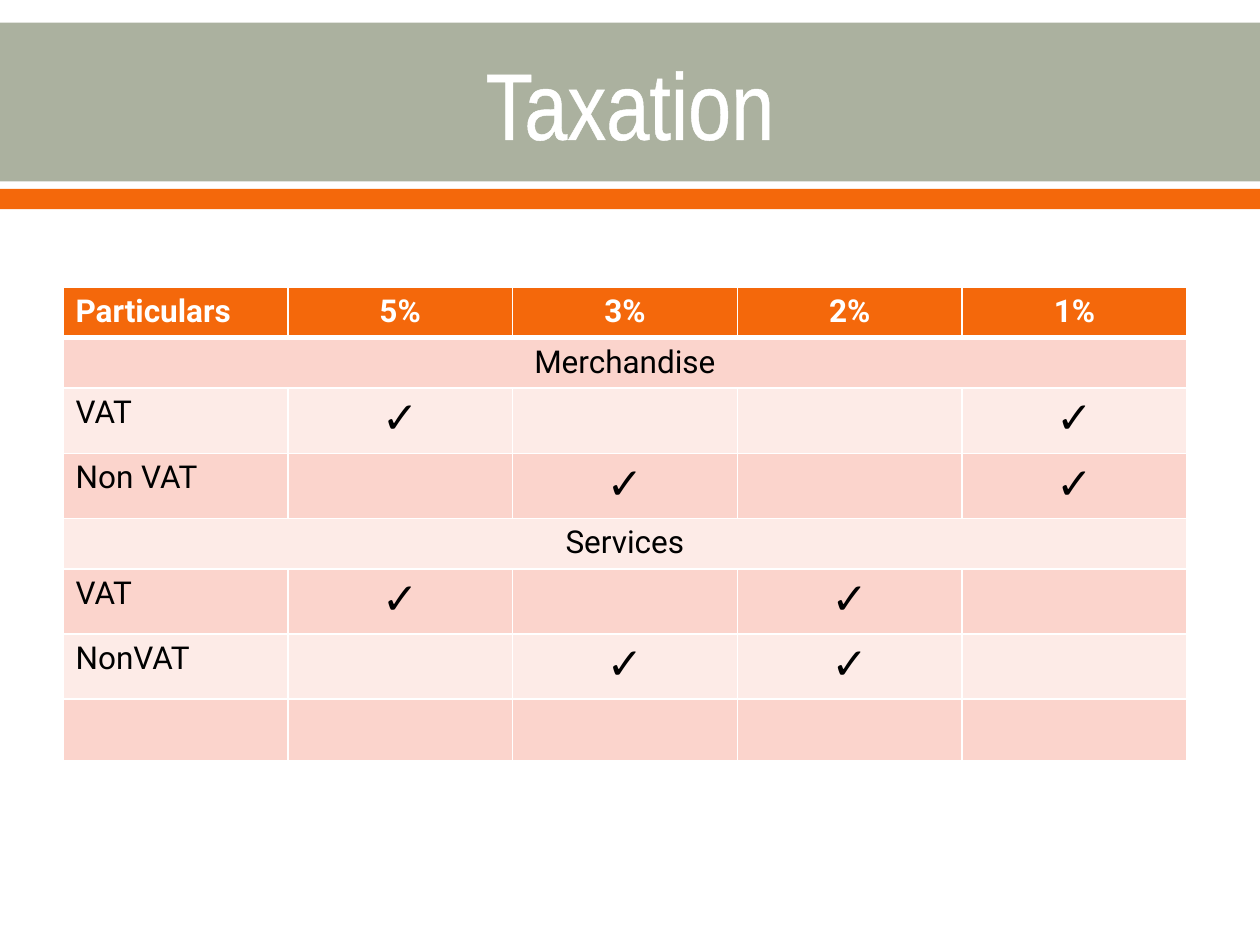
from dataclasses import dataclass

from lxml.etree import SubElement
from pptx import Presentation
from pptx.dml.color import RGBColor
from pptx.enum.shapes import MSO_SHAPE as Shape
from pptx.enum.text import MSO_ANCHOR as Anchor, PP_ALIGN as Align
from pptx.oxml.ns import qn
from pptx.util import Inches, Pt

WHITE, BLACK = "FFFFFF", "000000"
SAGE, ORANGE = "ABB19F", "F4680B"
PINK, PALE_PINK = "FBD4CC", "FDEBE7"
CHECK = "✓"

TITLE = {"name": "Arial Narrow", "size": Pt(54)}
HEADING = {"name": "Roboto", "size": Pt(18), "bold": True}
LABEL = {"name": "Roboto", "size": Pt(18), "bold": False}
MARK = {"name": "Arial", "size": Pt(25), "bold": False}


@dataclass
class Band:
    top: float
    height: float
    color: str


@dataclass
class TaxRow:
    label: str
    rates: tuple = ()
    section: bool = False


BANDS = [Band(0.18, 1.26, SAGE), Band(1.5, 0.16, ORANGE)]
RATES = ["5%", "3%", "2%", "1%"]
TAX_ROWS = [
    TaxRow("Merchandise", section=True),
    TaxRow("VAT", ("5%", "1%")),
    TaxRow("Non VAT", ("3%", "1%")),
    TaxRow("Services", section=True),
    TaxRow("VAT", ("5%", "2%")),
    TaxRow("NonVAT", ("3%", "2%")),
    TaxRow(""),
]


def paint(color_format, color: str) -> None:
    color_format.rgb = RGBColor.from_string(color)


def fill_with(target, color: str) -> None:
    target.fill.solid()
    paint(target.fill.fore_color, color)


def draw_band(slide, band: Band) -> None:
    strip = slide.shapes.add_shape(
        Shape.RECTANGLE, 0, Inches(band.top), Inches(10), Inches(band.height))
    strip.shadow.inherit = False
    fill_with(strip, band.color)
    strip.line.fill.background()


def write(frame, text: str, style: dict, color: str, align=Align.CENTER):
    paragraph = frame.paragraphs[0]
    paragraph.alignment = align
    run = paragraph.add_run()
    run.text = text
    for attribute, value in style.items():
        setattr(run.font, attribute, value)
    paint(run.font.color, color)
    return run


def add_line(parent, tag: str, points: float):
    line = SubElement(parent, qn(f"a:{tag}"), w=str(Pt(points)))
    fill = SubElement(line, qn("a:solidFill"))
    SubElement(fill, qn("a:srgbClr"), val=WHITE)
    return line


def draw_title(slide) -> None:
    title = slide.shapes.add_textbox(Inches(0.5), Inches(0.2), Inches(9), Inches(1.22))
    frame = title.text_frame
    frame.word_wrap = True
    frame.vertical_anchor = Anchor.MIDDLE
    run = write(frame, "Taxation", TITLE, WHITE)
    properties = run.font._element if hasattr(run.font, "_element") else run._r.get_or_add_rPr()
    properties.insert(0, add_line(properties, "ln", 1.1))


def format_cell(cell, color: str, top: float = 1, bottom: float = 1) -> None:
    properties = cell._tc.get_or_add_tcPr()
    for tag, points in {"lnL": 1, "lnR": 1, "lnT": top, "lnB": bottom}.items():
        add_line(properties, tag, points)
    fill_with(cell, color)


def draw_tax_table(slide) -> None:
    columns = len(RATES) + 1
    frame = slide.shapes.add_table(
        len(TAX_ROWS) + 1, columns, Inches(0.5), Inches(2.28), Inches(8.92), Inches(3.65))
    table = frame.table
    table.first_row = table.horz_banding = False

    table.rows[0].height = Inches(0.4)
    for column, heading in enumerate(["Particulars", *RATES]):
        cell = table.cell(0, column)
        format_cell(cell, ORANGE, bottom=3)
        align = Align.CENTER if column else Align.LEFT
        write(cell.text_frame, heading, HEADING, WHITE, align)

    for index, tax in enumerate(TAX_ROWS, start=1):
        table.rows[index].height = Inches(0.4 if tax.section else 0.49)
        for column in range(columns):
            format_cell(table.cell(index, column), PINK if index % 2 else PALE_PINK,
                        top=3 if index == 1 else 1)
        first = table.cell(index, 0)
        if tax.section:
            first.merge(table.cell(index, columns - 1))
        if tax.label:
            align = Align.CENTER if tax.section else Align.LEFT
            write(first.text_frame, tax.label, LABEL, BLACK, align)
        for rate in tax.rates:
            cell = table.cell(index, RATES.index(rate) + 1)
            write(cell.text_frame, CHECK, MARK, BLACK)


def main() -> None:
    deck = Presentation()
    deck.slide_width, deck.slide_height = Inches(10), Inches(7.5)
    slide = deck.slides.add_slide(deck.slide_layouts[6])
    for band in BANDS:
        draw_band(slide, band)
    draw_title(slide)
    draw_tax_table(slide)
    deck.save("out.pptx")


if __name__ == "__main__":
    main()
